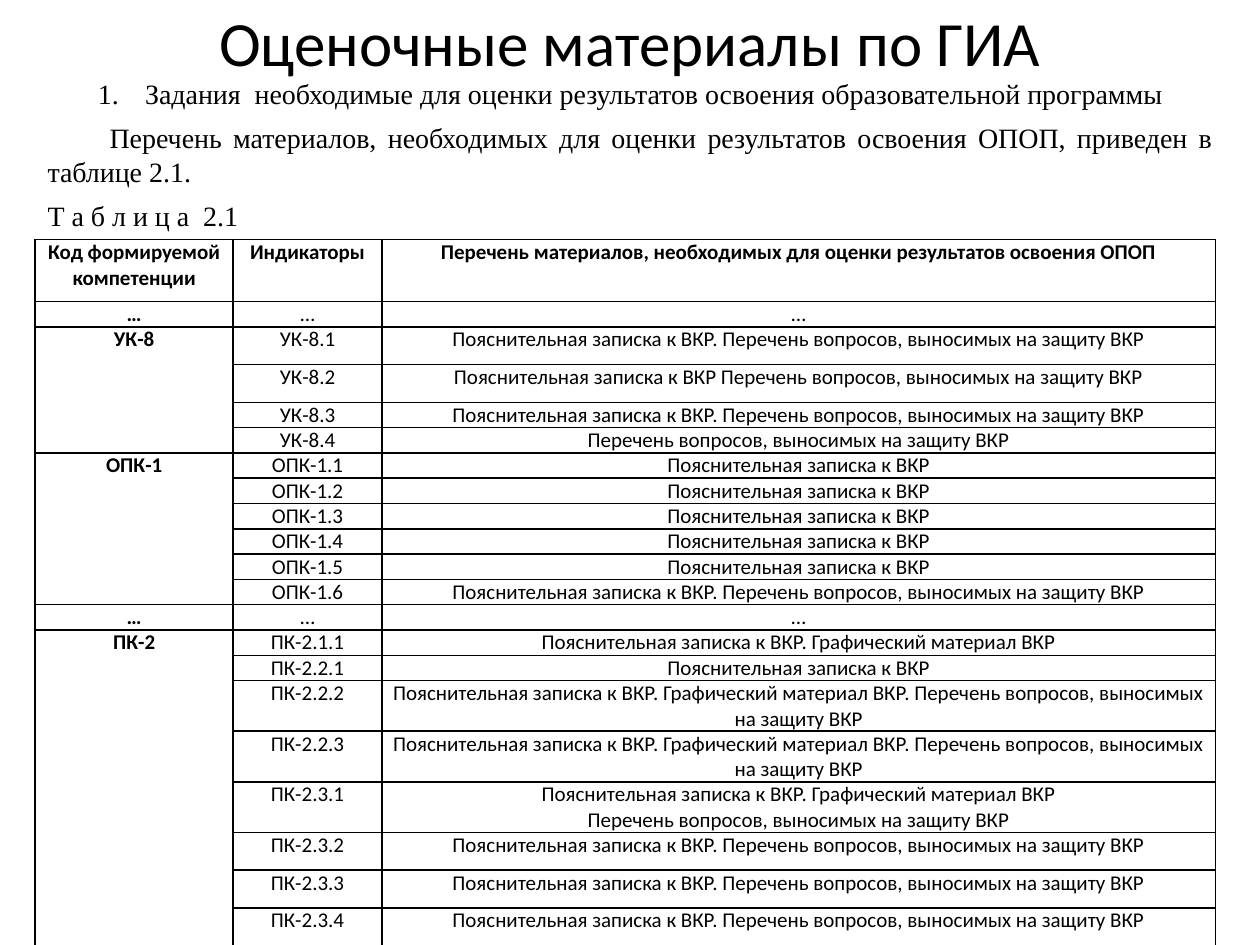
from lxml.etree import SubElement
from pptx import Presentation
from pptx.dml.color import RGBColor
from pptx.enum.text import MSO_ANCHOR, MSO_AUTO_SIZE, PP_ALIGN
from pptx.oxml.ns import qn
from pptx.util import Cm, Pt

COLORS = {"text": "000000", "border": "000000"}
NOTE = "Пояснительная записка к ВКР"
GRAPHICS = "Графический материал ВКР"
QUESTIONS = "Перечень вопросов, выносимых на защиту ВКР"
NOTE_QUESTIONS = f"{NOTE}. {QUESTIONS}"
ALL_MATERIALS = f"{NOTE}. {GRAPHICS}. {QUESTIONS}"
SINGLE, SPACED, DOUBLE, HEADER = Cm(0.51), Cm(0.76), Cm(1.02), Cm(1.25)

# competence -> (indicator, materials, row height)
COMPETENCES = [
    ("Код формируемой компетенции", [
        ("Индикаторы", "Перечень материалов, необходимых для оценки результатов освоения ОПОП", HEADER)]),
    ("…", [("…", "…", SINGLE)]),
    ("УК-8", [
        ("УК-8.1", NOTE_QUESTIONS, SPACED),
        ("УК-8.2", f"{NOTE} {QUESTIONS}", SPACED),
        ("УК-8.3", NOTE_QUESTIONS, SINGLE),
        ("УК-8.4", QUESTIONS, SINGLE)]),
    ("ОПК-1", [(f"ОПК-1.{number}", NOTE, SINGLE) for number in range(1, 6)]
        + [("ОПК-1.6", NOTE_QUESTIONS, SINGLE)]),
    ("…", [("…", "…", SINGLE)]),
    ("ПК-2", [
        ("ПК-2.1.1", f"{NOTE}. {GRAPHICS}", SINGLE),
        ("ПК-2.2.1", NOTE, SINGLE),
        ("ПК-2.2.2", ALL_MATERIALS, DOUBLE),
        ("ПК-2.2.3", ALL_MATERIALS, DOUBLE),
        ("ПК-2.3.1", f"{NOTE}. {GRAPHICS}\n{QUESTIONS}", DOUBLE)]
        + [(f"ПК-2.3.{number}", NOTE_QUESTIONS, SPACED) for number in range(2, 5)]),
]


def set_font(paragraph, name, size, bold=False):
    font = paragraph.font
    font.name, font.size, font.bold = name, Pt(size), bold
    font.color.rgb = RGBColor.from_string(COLORS["text"])


def format_cell(cell, bold):
    """Centre the text at the top of an unfilled cell with thin borders."""
    cell.margin_left = cell.margin_right = Cm(0.1)
    cell.margin_top = cell.margin_bottom = 0
    cell.vertical_anchor = MSO_ANCHOR.TOP
    for paragraph in cell.text_frame.paragraphs:
        paragraph.alignment = PP_ALIGN.CENTER
        set_font(paragraph, "Calibri", 12, bold)
    properties = cell._tc.get_or_add_tcPr()
    for side in ("a:lnL", "a:lnR", "a:lnT", "a:lnB"):
        line = SubElement(properties, qn(side), w=str(Pt(1)))
        fill = SubElement(line, qn("a:solidFill"))
        SubElement(fill, qn("a:srgbClr"), val=COLORS["border"])
    cell.fill.background()


deck = Presentation()
deck.slide_width, deck.slide_height = Cm(25.4), Cm(19.05)
slide = deck.slides.add_slide(deck.slide_layouts[5])

title = slide.shapes.title
title.left, title.top, title.width, title.height = Cm(1.27), Cm(0.25), Cm(22.86), Cm(1.17)
title.text_frame.text = "Оценочные материалы по ГИА"
title.text_frame.auto_size = MSO_AUTO_SIZE.NONE
title.text_frame.vertical_anchor = MSO_ANCHOR.MIDDLE
title.text_frame.paragraphs[0].alignment = PP_ALIGN.CENTER
set_font(title.text_frame.paragraphs[0], "Calibri", 36)

intro = slide.shapes.add_textbox(Cm(0.71), Cm(1.42), Cm(24), Cm(3.43)).text_frame
intro.word_wrap = True
intro.auto_size = MSO_AUTO_SIZE.SHAPE_TO_FIT_TEXT
intro.text = (
    "Задания  необходимые для оценки результатов освоения образовательной программы\n"
    "Перечень материалов, необходимых для оценки результатов освоения ОПОП, приведен в таблице 2.1.\n"
    "Т а б л и ц а  2.1"
)
heading, explanation, caption = intro.paragraphs
for para in intro.paragraphs:
    set_font(para, "Times New Roman", 16, bold=para is heading)
for para in (heading, caption):
    para.space_before = para.space_after = Pt(6)
heading.alignment = PP_ALIGN.CENTER
explanation.alignment = PP_ALIGN.JUSTIFY
caption.alignment = PP_ALIGN.LEFT
heading_properties = heading._p.get_or_add_pPr()
heading_properties.set("marL", str(Cm(0.95)))
heading_properties.set("indent", str(-Cm(0.95)))
numbering = heading_properties.makeelement(qn("a:buAutoNum"), {"type": "arabicPeriod"})
heading_properties.find(qn("a:defRPr")).addprevious(numbering)
explanation._p.get_or_add_pPr().set("indent", str(Cm(1.25)))

row_count = sum(len(indicators) for _, indicators in COMPETENCES)
widths = [Cm(3.99), Cm(3), Cm(16.8)]
heights = [height for _, indicators in COMPETENCES for _, _, height in indicators]
frame = slide.shapes.add_table(row_count, 3, Cm(0.71), Cm(4.83), sum(widths), sum(heights))
table = frame.table
table.first_row = table.horz_banding = False
for column, width in zip(table.columns, widths):
    column.width = width
for row, height in zip(table.rows, heights):
    row.height = height

row_index = 0
for competence, indicators in COMPETENCES:
    first_row = row_index
    table.cell(first_row, 0).text = competence
    for indicator, materials, _ in indicators:
        table.cell(row_index, 1).text = indicator
        table.cell(row_index, 2).text = materials
        for column_index in range(3):
            format_cell(table.cell(row_index, column_index), bold=row_index == 0 or column_index == 0)
        row_index += 1
    if len(indicators) > 1:
        table.cell(first_row, 0).merge(table.cell(row_index - 1, 0))

deck.save("out.pptx")
